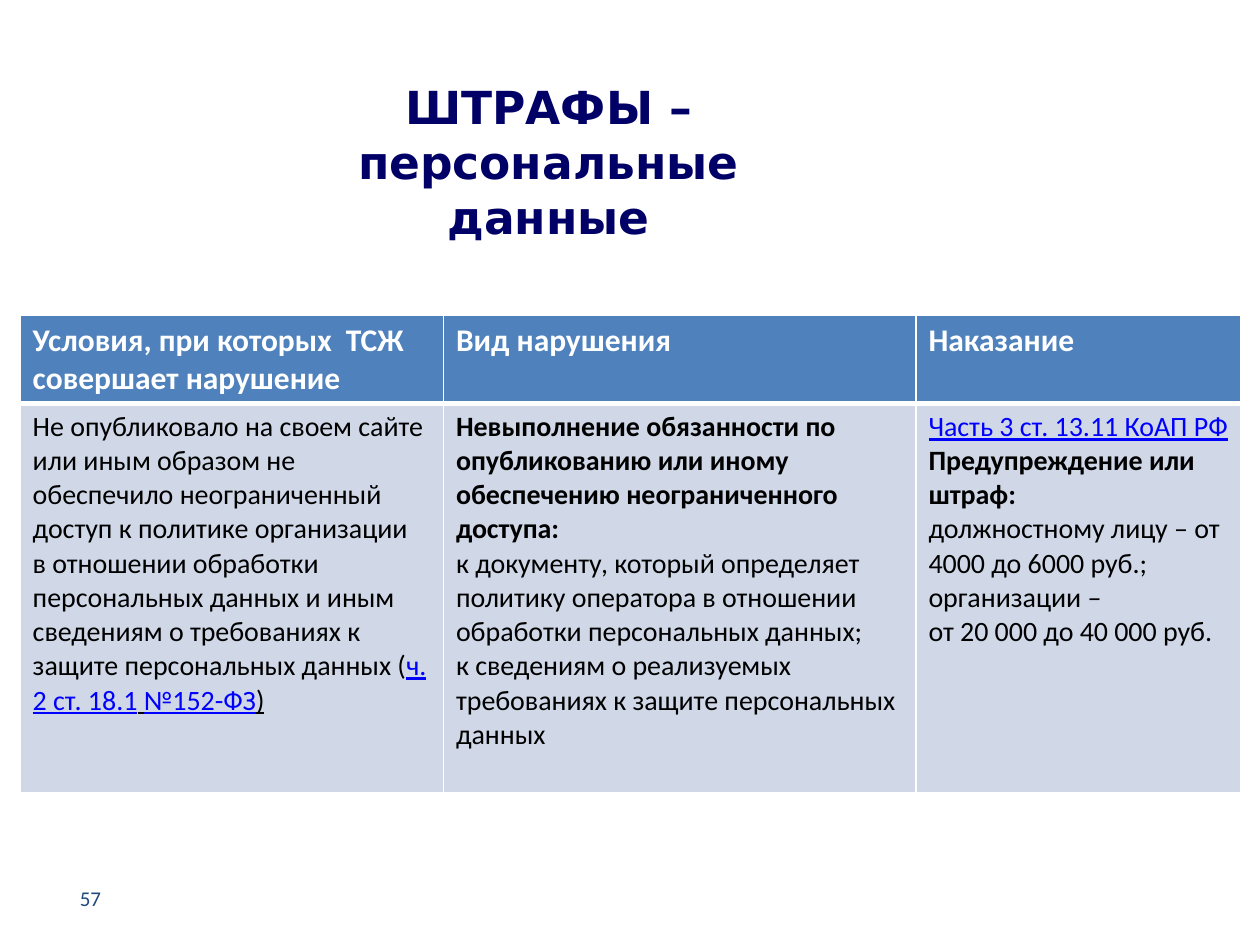
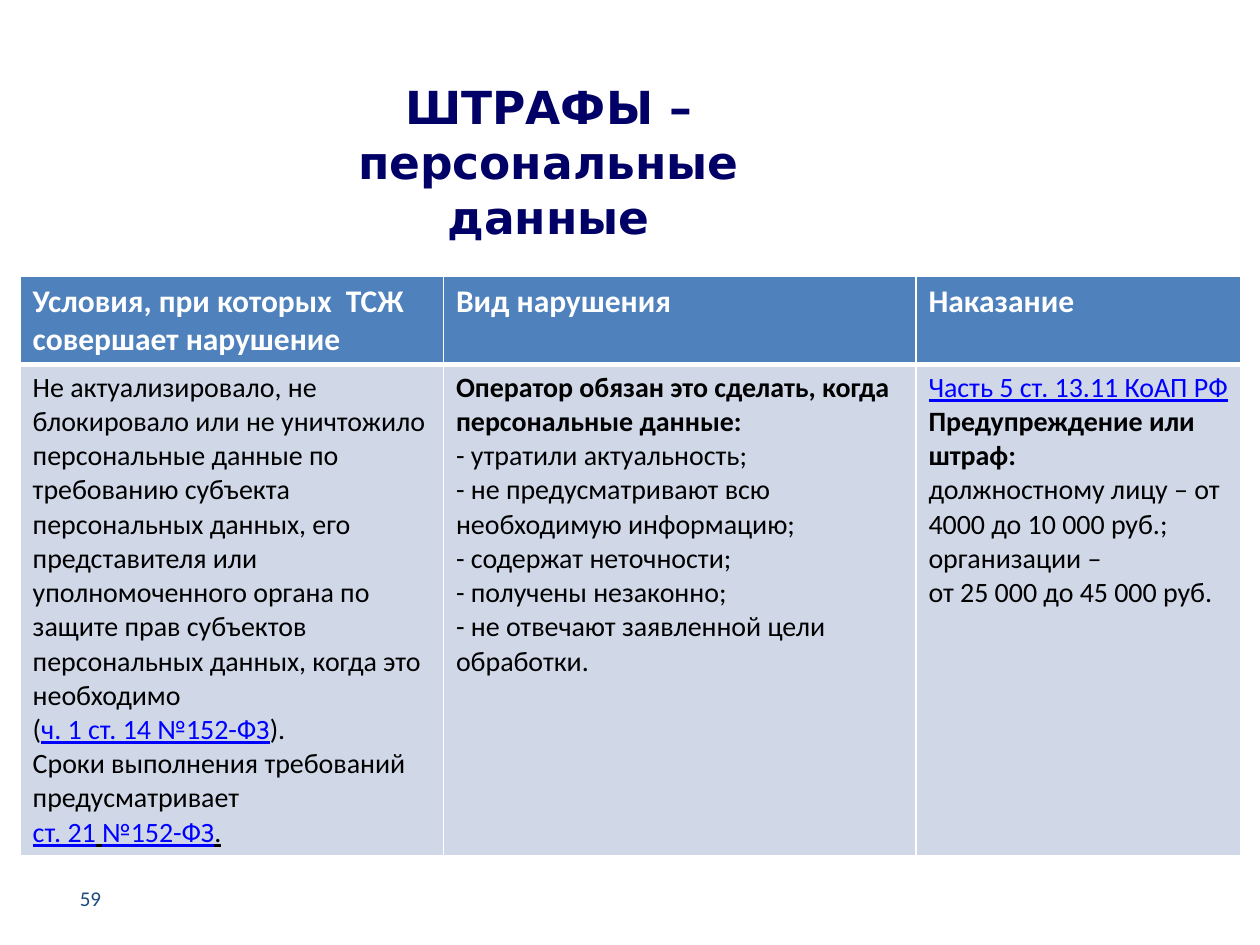
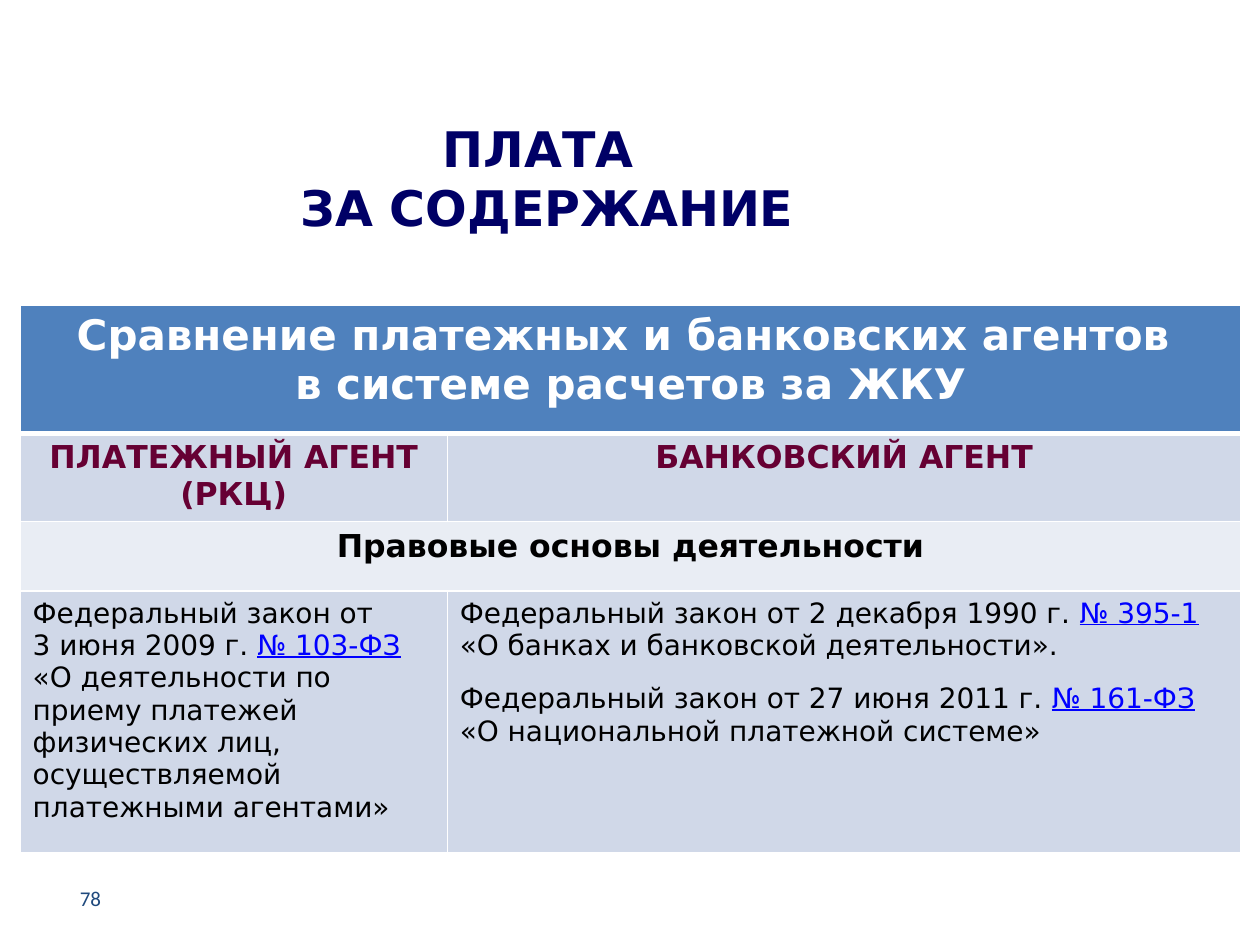
import pptx
import pptx.util
import pptx.dml.color
import pptx.enum.text
import lxml.etree

Inches, Pt = pptx.util.Inches, pptx.util.Pt
ALIGN, MIDDLE = pptx.enum.text.PP_ALIGN, pptx.enum.text.MSO_ANCHOR.MIDDLE

# Shared look
NAVY, SLATE, PLUM, LINK = "000066", "1F497D", "660033", "0000FF"
BLACK, WHITE = "000000", "FFFFFF"
HEAD, BAND, PALE = "4F81BD", "D0D8E8", "E9EDF4"
SANS, WIDE = "Calibri", "DejaVu Sans"
NS = "{http://schemas.openxmlformats.org/drawingml/2006/main}"


def style(font, face, size, color, bold=False):
    font.name, font.size, font.bold = face, Pt(size), bold
    font.color.rgb = pptx.dml.color.RGBColor.from_string(color)


def write(frame, lines, face, size, color, bold=False, align=ALIGN.LEFT):
    """Parts are split by |; ~ marks a link, _ an underline; * opens a bold line."""
    for i, line in enumerate(lines):
        para = frame.paragraphs[0] if i == 0 else frame.add_paragraph()
        para.alignment = align
        heavy = bold or line.startswith("*")
        for part in line.lstrip("*").split("|"):
            mark = part[:1]
            for j, piece in enumerate(part.lstrip("~_").split("\n")):
                if j:
                    para.add_line_break()
                if piece:
                    run = para.add_run()
                    run.text = piece
                    style(run.font, face, size, LINK if mark == "~" else color, heavy)
                    if mark in ("~", "_"):
                        run.font.underline = True
        for gap in para._p.findall(NS + "br"):
            lxml.etree.SubElement(gap, NS + "rPr", sz=str(size * 100))


# Rows: height, fill, size, colour, bold, align, cells
top_row = (0.7, HEAD, 18, WHITE, True, ALIGN.LEFT, [
    ["Условия, при которых  ТСЖ совершает нарушение"],
    ["Вид нарушения"],
    ["Наказание"],
])
fines = "ШТРАФЫ –\nперсональные\nданные"
fine_box, fine_cols = (2.34, 0.47, 4.03, 1.62), (3.36, 3.75, 2.58)

# Slides: number, title, title box, title size, table top, font, columns, rows
pages = [
    (57, fines, fine_box, 26, 2.5, SANS, fine_cols, [
        top_row,
        (3.09, BAND, 16, BLACK, False, ALIGN.LEFT, [
            ["Не опубликовало на своем сайте или иным образом не обеспечило "
             "неограниченный доступ к политике организации",
             "в отношении обработки персональных данных и иным сведениям о требованиях "
             "к защите персональных данных (|~ч. 2 ст. 18.1|_ |~№152-ФЗ|_)"],
            ["*Невыполнение обязанности по опубликованию или иному обеспечению "
             "неограниченного доступа:",
             "к документу, который определяет политику оператора в отношении "
             "обработки персональных данных;",
             "к сведениям о реализуемых требованиях к защите персональных данных"],
            ["~Часть 3 ст. 13.11 КоАП РФ",
             "*Предупреждение или штраф:",
             "должностному лицу – от 4000 до 6000 руб.;",
             "организации –",
             "от 20 000 до 40 000 руб."],
        ]),
    ]),
    (59, fines, fine_box, 26, 2.19, SANS, fine_cols, [
        top_row,
        (3.9, BAND, 16, BLACK, False, ALIGN.LEFT, [
            ["Не актуализировало, не блокировало или не уничтожило персональные данные "
             "по требованию субъекта персональных данных, его представителя или\n"
             "уполномоченного органа по защите прав субъектов\n"
             "персональных данных, когда это необходимо",
             "(|~ч. 1 ст. 14 №152-ФЗ|).",
             "Сроки выполнения требований предусматривает\n|~ст. 21|_ |~№152-ФЗ|_."],
            ["*Оператор обязан это сделать, когда персональные данные:",
             "- утратили актуальность;",
             "- не предусматривают всю необходимую информацию;",
             "- содержат неточности;",
             "- получены незаконно;",
             "- не отвечают заявленной цели обработки."],
            ["~Часть 5 ст. 13.11 КоАП РФ",
             "*Предупреждение или штраф:",
             "должностному лицу – от 4000 до 10 000 руб.;",
             "организации –",
             "от 25 000 до 45 000 руб."],
        ]),
    ]),
    (78, "ПЛАТА \nЗА СОДЕРЖАНИЕ", (2.27, 0.78, 4.14, 1.25), 28, 2.42, WIDE, (3.39, 6.3), [
        (1.02, HEAD, 24, WHITE, True, ALIGN.CENTER, [
            ["Сравнение платежных и банковских агентов ", "в системе расчетов за ЖКУ"]]),
        (0.68, BAND, 18, PLUM, True, ALIGN.CENTER, [
            ["ПЛАТЕЖНЫЙ АГЕНТ", "(РКЦ)"], ["БАНКОВСКИЙ АГЕНТ"]]),
        (0.55, PALE, 18, BLACK, True, ALIGN.CENTER, [["Правовые основы деятельности"]]),
        (2.08, BAND, 16, BLACK, False, ALIGN.LEFT, [
            ["Федеральный закон от",
             "3 июня 2009 г. |~№ 103-ФЗ| «О деятельности по приему платежей "
             "физических лиц, осуществляемой платежными агентами»"],
            ["Федеральный закон от 2 декабря 1990 г. |~№ 395-1| "
             "«О банках и банковской деятельности».",
             "Федеральный закон от 27 июня 2011 г. |~№ 161-ФЗ| "
             "«О национальной платежной системе»"],
        ]),
    ]),
]

deck = pptx.Presentation()
deck.slide_width, deck.slide_height = Inches(10), Inches(7.5)

for number, title, box, size, top, face, cols, rows in pages:
    slide = deck.slides.add_slide(deck.slide_layouts[6])

    # Title and page number
    for text, spot, look in (
        (title, box, (WIDE, size, NAVY, True, ALIGN.CENTER)),
        (str(number), (0.35, 6.93, 0.55, 0.4), (SANS, 12, SLATE, False, ALIGN.RIGHT)),
    ):
        frame = slide.shapes.add_textbox(*map(Inches, spot)).text_frame
        frame.word_wrap, frame.vertical_anchor = True, MIDDLE
        write(frame, [text], *look)

    # Table grid
    high = sum(row[0] for row in rows)
    grid = slide.shapes.add_table(len(rows), len(cols), Inches(0.16), Inches(top),
                                  Inches(sum(cols)), Inches(high)).table
    grid.first_row = grid.horz_banding = False
    for col, width in zip(grid.columns, cols):
        col.width = Inches(width)

    # Table rows
    for r, (height, fill, points, color, bold, align, cells) in enumerate(rows):
        grid.rows[r].height = Inches(height)
        if len(cells) < len(cols):
            grid.cell(r, 0).merge(grid.cell(r, len(cols) - 1))
        for c, lines in enumerate(cells):
            write(grid.cell(r, c).text_frame, lines, face, points, color, bold, align)
        for cell in grid.rows[r].cells:
            cell.fill.solid()
            cell.fill.fore_color.rgb = pptx.dml.color.RGBColor.from_string(fill)
            # White borders, thick under the heading row
            for i, side in enumerate("LRTB"):
                thick = (r, side) in ((0, "B"), (1, "T"))
                line = lxml.etree.Element(NS + "ln" + side, w=str(Pt(3 if thick else 1)))
                paint = lxml.etree.SubElement(line, NS + "solidFill")
                lxml.etree.SubElement(paint, NS + "srgbClr", val=WHITE)
                cell._tc.tcPr.insert(i, line)

    # Gap between the two laws
    if number == 78:
        grid.cell(3, 1).text_frame.paragraphs[0].space_after = Pt(12)

deck.save("out.pptx")
